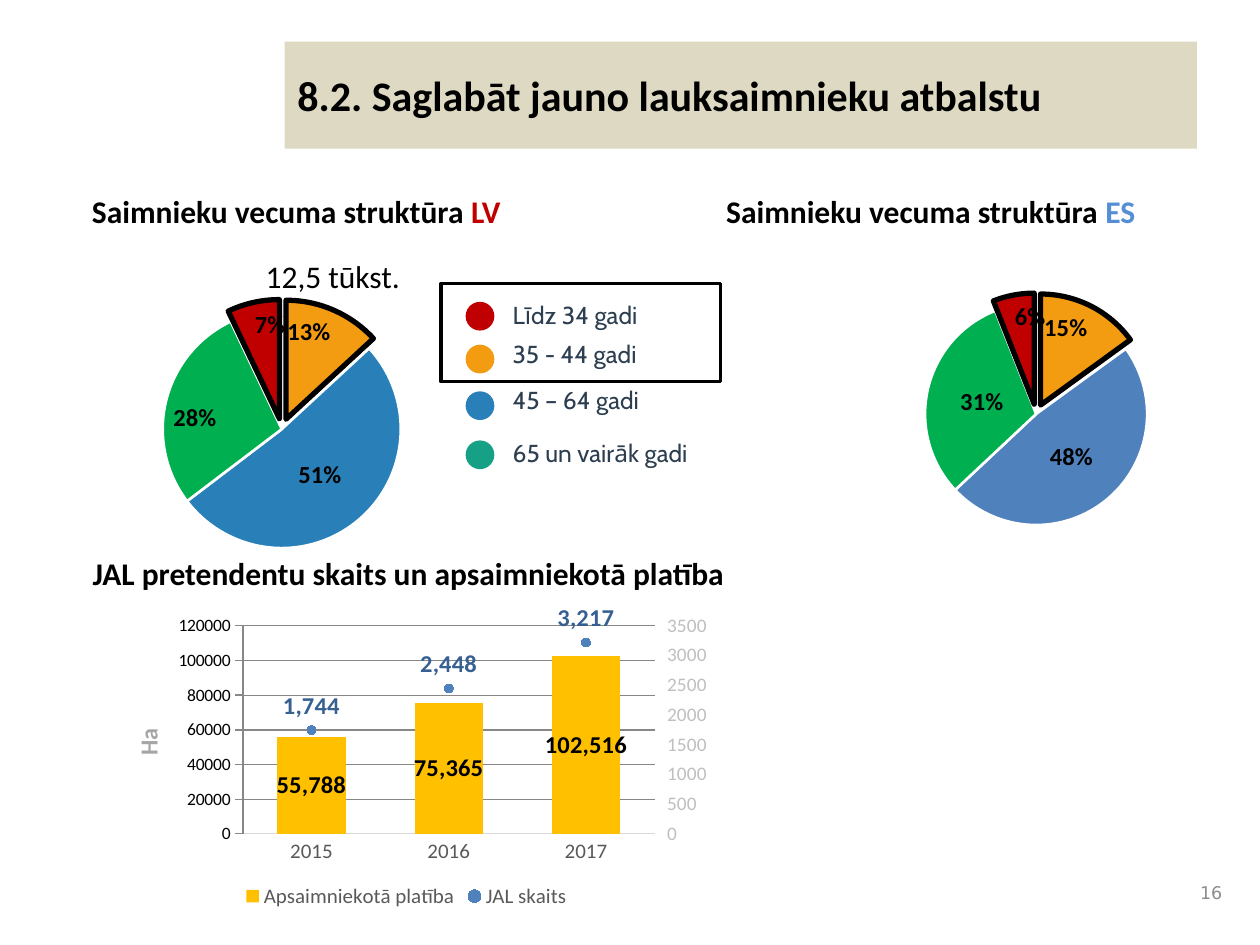
import copy
import dataclasses

import pptx
import pptx.chart.axis
import pptx.chart.data
import pptx.dml.color
import pptx.enum.chart
import pptx.enum.dml
import pptx.enum.shapes
import pptx.enum.text
import pptx.oxml
import pptx.oxml.ns
import pptx.util
from pptx.util import Inches, Pt

ALIGN = pptx.enum.text.PP_ALIGN
ANCHOR = pptx.enum.text.MSO_ANCHOR
CHART = pptx.enum.chart.XL_CHART_TYPE
LABEL = pptx.enum.chart.XL_LABEL_POSITION
SHAPE = pptx.enum.shapes.MSO_SHAPE
qn = pptx.oxml.ns.qn


def font_style(size, color, bold=False, name="Calibri"):
    """Return the format values of one type style."""
    return {"size": Pt(size), "color": color, "bold": bold, "name": name}


@dataclasses.dataclass(frozen=True)
class Theme:
    """Colours and type styles of the slide."""
    banner = "DDD9C3"
    black = "000000"
    white = "FFFFFF"
    red, orange, blue = "C00000", "F39C12", "2980B9"
    green, teal, steel = "00B050", "16A085", "4F81BD"
    gold, sky, grid = "FFC000", "558ED5", "D9D9D9"
    title = font_style(24, black, True)
    heading = font_style(18, black, True)
    note = font_style(18, black)
    key = font_style(14, "2C3E50", name="Cabin")
    number = font_style(10, "8C8C8C", name="DejaVu Sans")
    label = font_style(14, black, True)
    count_label = font_style(14, "376092", True)
    axis = font_style(11, "BFBFBF")
    category = font_style(12, "595959")
    axis_title = font_style(14, "A6A6A6", True)


THEME = Theme()


def rgb(color):
    """Turn a hex string into a colour."""
    return pptx.dml.color.RGBColor.from_string(color)


def apply(target, values):
    """Set each format value on the target, colours included."""
    for name, value in values.items():
        if name == "color":
            target.color.rgb = rgb(value)
        else:
            setattr(target, name, value)


def paint(fill, color):
    """Fill with a solid colour."""
    fill.solid()
    fill.fore_color.rgb = rgb(color)


def place(shape, box):
    """Move a shape into a box given in inches."""
    sides = ("left", "top", "width", "height")
    apply(shape, dict(zip(sides, map(Inches, box))))


def write(frame, runs, align=ALIGN.LEFT, anchor=ANCHOR.TOP, wrap=True):
    """Write one unbulleted paragraph of (text, style) runs."""
    apply(frame, {"word_wrap": wrap, "vertical_anchor": anchor,
                  "auto_size": pptx.enum.text.MSO_AUTO_SIZE.NONE})
    paragraph = frame.paragraphs[0]
    properties = paragraph._p.get_or_add_pPr()
    apply(paragraph, {"alignment": align, "space_before": Pt(0)})
    properties.set("marL", "0")
    properties.set("indent", "0")
    properties.append(pptx.oxml.parse_xml(
        f'<a:buNone {pptx.oxml.ns.nsdecls("a")}/>'))
    for text, style in runs:
        run = paragraph.add_run()
        run.text = text
        apply(run.font, style)


def add_text(slide, box, text, style, **layout):
    """Add a text box."""
    textbox = slide.shapes.add_textbox(*map(Inches, box))
    write(textbox.text_frame, [(text, style)], **layout)


def add_outline(slide, kind, box, line, fill=None):
    """Add a preset shape with a two-point line."""
    shape = slide.shapes.add_shape(kind, *map(Inches, box))
    shape.shadow.inherit = False
    if fill:
        paint(shape.fill, fill)
    else:
        shape.fill.background()
    apply(shape.line, {"color": line, "width": Pt(2)})


def set_layout(parent, index, **sizes):
    """Give a chart part a manual layout in fractions of the chart."""
    for old in parent.findall(qn("c:layout")):
        parent.remove(old)
    target = '<c:layoutTarget val="inner"/>' if "w" in sizes else ""
    modes = "".join(f'<c:{key}Mode val="edge"/>' for key in "xy")
    values = "".join(f'<c:{key} val="{value}"/>' for key, value in sizes.items())
    parent.insert(index, pptx.oxml.parse_xml(
        f'<c:layout {pptx.oxml.ns.nsdecls("c")}><c:manualLayout>'
        f'{target}{modes}{values}</c:manualLayout></c:layout>'))


def add_chart(slide, kind, box, categories, series, plot):
    """Add a chart with its plot area fixed."""
    data = pptx.chart.data.CategoryChartData()
    data.categories = categories
    for name, values in series:
        data.add_series(name, values)
    chart = slide.shapes.add_chart(kind, *map(Inches, box), data).chart
    apply(chart, {"has_title": False, "has_legend": False})
    apply(chart.font, {"size": Pt(10), "name": "Calibri"})
    set_layout(chart._chartSpace.chart.plotArea, 0, **dict(zip("xywh", plot)))
    return chart


def label_series(series, style, number_format, position):
    """Show the values of a series."""
    labels = series.data_labels
    apply(labels, {"show_value": True, "number_format": number_format,
                   "number_format_is_linked": False, "position": position})
    apply(labels.font, style)


def age_pie(slide, box, plot, shares, colors, number_format, position, special):
    """Draw an age pie with the two youngest groups pulled out."""
    chart = add_chart(slide, CHART.PIE, box, "1234", [("Series 1", shares)], plot)
    chart.plots[0].vary_by_categories = True
    series = chart.plots[0].series[0]
    label_series(series, THEME.label, number_format, position)
    for index, color in enumerate(colors):
        young = index in (0, 3)
        point = series.points[index]
        paint(point.format.fill, color)
        apply(point.format.line, {"color": THEME.black if young else THEME.white,
                                  "width": Pt(3 if young else 1.5)})
        if index in special:
            point.data_label.position = special[index]
            apply(point.data_label.font, THEME.label)
    for slice_format in series._element.findall(qn("c:dPt")):
        if slice_format.find(qn("c:idx")).get("val") in "03":
            slice_format.find(qn("c:spPr")).addprevious(pptx.oxml.parse_xml(
                f'<c:explosion {pptx.oxml.ns.nsdecls("c")} val="9"/>'))
    shared_format = series._element.find(qn("c:dLbls")).find(qn("c:numFmt"))
    for label in series._element.iter(qn("c:dLbl")):
        label.insert(1, copy.deepcopy(shared_format))


def add_right_axis(plot_area):
    """Move the second series to a line plot with its own axis."""
    counts = plot_area.findall(".//" + qn("c:ser"))[1]
    for bar_only in counts.findall(qn("c:invertIfNegative")):
        counts.remove(bar_only)
    parts = pptx.oxml.parse_xml(
        f'<c:plotArea {pptx.oxml.ns.nsdecls("c")}>'
        '<c:lineChart><c:grouping val="standard"/><c:varyColors val="0"/>'
        '<c:marker val="1"/><c:axId val="501"/><c:axId val="502"/></c:lineChart>'
        '<c:catAx><c:axId val="501"/><c:scaling/><c:delete val="1"/>'
        '<c:axPos val="b"/><c:crossAx val="502"/></c:catAx>'
        '<c:valAx><c:axId val="502"/><c:scaling/><c:delete val="0"/>'
        '<c:axPos val="r"/><c:crossAx val="501"/><c:crosses val="max"/></c:valAx>'
        '</c:plotArea>')
    line_plot, category_axis, value_axis = list(parts)
    line_plot.insert(2, counts)
    plot_area.find(qn("c:barChart")).addnext(line_plot)
    plot_area.findall(qn("c:valAx"))[-1].addnext(category_axis)
    category_axis.addnext(value_axis)
    return pptx.chart.axis.ValueAxis(value_axis)


def applicants_chart(slide, box):
    """Draw managed area as columns and applicant numbers as markers."""
    tick = pptx.enum.chart.XL_TICK_MARK
    chart = add_chart(slide, CHART.COLUMN_CLUSTERED, box, ["2015", "2016", "2017"],
                      [("Apsaimniekotā platība", (55788, 75365, 102516)),
                       ("JAL skaits", (1744, 2448, 3217))], (0.24, 0.06, 0.655, 0.68))
    right = add_right_axis(chart._chartSpace.chart.plotArea)
    left, years = chart.value_axis, chart.category_axis
    for axis, top, step, mark, code in ((left, 120000, 20000, tick.NONE, "#,##0"),
                                        (right, 3500, 500, tick.OUTSIDE, "0")):
        apply(axis, {"minimum_scale": 0, "maximum_scale": top, "major_unit": step,
                     "major_tick_mark": mark, "minor_tick_mark": tick.NONE,
                     "has_major_gridlines": axis is left})
        apply(axis.tick_labels, {"number_format": code, "number_format_is_linked": False})
        apply(axis.tick_labels.font, THEME.axis)
        axis.format.line.fill.background()
    apply(left.major_gridlines.format.line,
          {"color": THEME.grid, "width": Pt(0.75),
           "dash_style": pptx.enum.dml.MSO_LINE.DASH})
    years.major_tick_mark = tick.NONE
    apply(years.tick_labels.font, THEME.category)
    apply(years.format.line, {"color": THEME.grid, "width": Pt(0.75)})
    unit = left.axis_title.text_frame.paragraphs[0].add_run()
    unit.text = "Ha"
    apply(unit.font, THEME.axis_title)
    set_layout(left.axis_title._element, 1, x=0.055, y=0.38)
    columns, markers = chart.plots
    apply(columns, {"gap_width": 101, "overlap": -27, "vary_by_categories": False})
    area, counts = columns.series[0], markers.series[0]
    paint(area.format.fill, THEME.gold)
    label_series(area, THEME.label, "#,##0", LABEL.CENTER)
    counts.smooth = False
    counts.format.line.fill.background()
    apply(counts.marker, {"style": pptx.enum.chart.XL_MARKER_STYLE.CIRCLE, "size": 5})
    paint(counts.marker.format.fill, THEME.steel)
    counts.marker.format.line.color.rgb = rgb(THEME.steel)
    label_series(counts, THEME.count_label, "#,##0", LABEL.ABOVE)
    chart.has_legend = True
    apply(chart.legend, {"position": pptx.enum.chart.XL_LEGEND_POSITION.BOTTOM,
                         "include_in_layout": False})
    apply(chart.legend.font, THEME.category)


def age_key(slide, left, top):
    """Draw the age groups' key and frame the two youngest."""
    groups = (("Līdz 34 gadi", THEME.red, 0.16, 0.08),
              ("35 - 44 gadi", THEME.orange, 0.5, 0.39),
              ("45 – 64 gadi", THEME.blue, 0.87, 0.76),
              ("65 un vairāk gadi", THEME.teal, 1.26, 1.18))
    for text, color, dot, line in groups:
        add_outline(slide, SHAPE.OVAL, (left + 0.21, top + dot, 0.2, 0.2), color, color)
        add_text(slide, (left + 0.47, top + line, 1.77, 0.34), text, THEME.key)
    add_outline(slide, SHAPE.RECTANGLE, (left, top, 2.22, 0.78), THEME.black)


def headings(slide):
    """Fill the title and the three section headings."""
    title, *bodies = slide.placeholders
    place(title, (2.26, 0.33, 7.24, 0.85))
    paint(title.fill, THEME.banner)
    write(title.text_frame, [("8.2. Saglabāt jauno lauksaimnieku atbalstu", THEME.title)],
          anchor=ANCHOR.MIDDLE)
    structure = ("Saimnieku vecuma struktūra ", THEME.heading)
    sections = (
        ((0.63, 1.47, 8.82, 5.2), ALIGN.LEFT,
         [structure, ("LV", {**THEME.heading, "color": THEME.red})]),
        ((0.15, 4.35, 5.7, 0.33), ALIGN.RIGHT,
         [("JAL pretendentu skaits un apsaimniekotā platība", THEME.heading)]),
        ((5.25, 1.47, 3.86, 0.38), ALIGN.RIGHT,
         [structure, ("ES", {**THEME.heading, "color": THEME.sky})]))
    for body, (box, align, runs) in zip(bodies, sections):
        place(body, box)
        write(body.text_frame, runs, align=align)
    for unused in bodies[len(sections):]:
        unused._element.getparent().remove(unused._element)


def main():
    """Build and save the slide."""
    deck = pptx.Presentation()
    apply(deck, {"slide_width": Inches(10), "slide_height": Inches(7.5)})
    slide = deck.slides.add_slide(deck.slide_layouts[4])
    headings(slide)
    age_pie(slide, (0, 2.22, 4.56, 2.51), (0.283, 0.096, 0.415, 0.753), (13, 51, 28, 7),
            (THEME.orange, THEME.blue, THEME.green, THEME.red), '0"%"',
            LABEL.INSIDE_END, {1: LABEL.CENTER})
    age_pie(slide, (6.4, 1.85, 3.54, 3.03), (0.266, 0.172, 0.498, 0.604),
            (0.15, 0.48, 0.31, 0.06),
            (THEME.orange, THEME.steel, THEME.green, THEME.red), "0%",
            LABEL.CENTER, dict.fromkeys((0, 3), LABEL.INSIDE_END))
    applicants_chart(slide, (0.73, 4.79, 4.99, 2.46))
    age_key(slide, 3.5, 2.25)
    add_text(slide, (2.01, 1.99, 1.28, 0.4), "12,5 tūkst.", THEME.note, wrap=False)
    add_text(slide, (9.33, 6.92, 0.47, 0.33), "16", THEME.number,
             align=ALIGN.RIGHT, anchor=ANCHOR.MIDDLE)
    deck.save("out.pptx")


if __name__ == "__main__":
    main()
